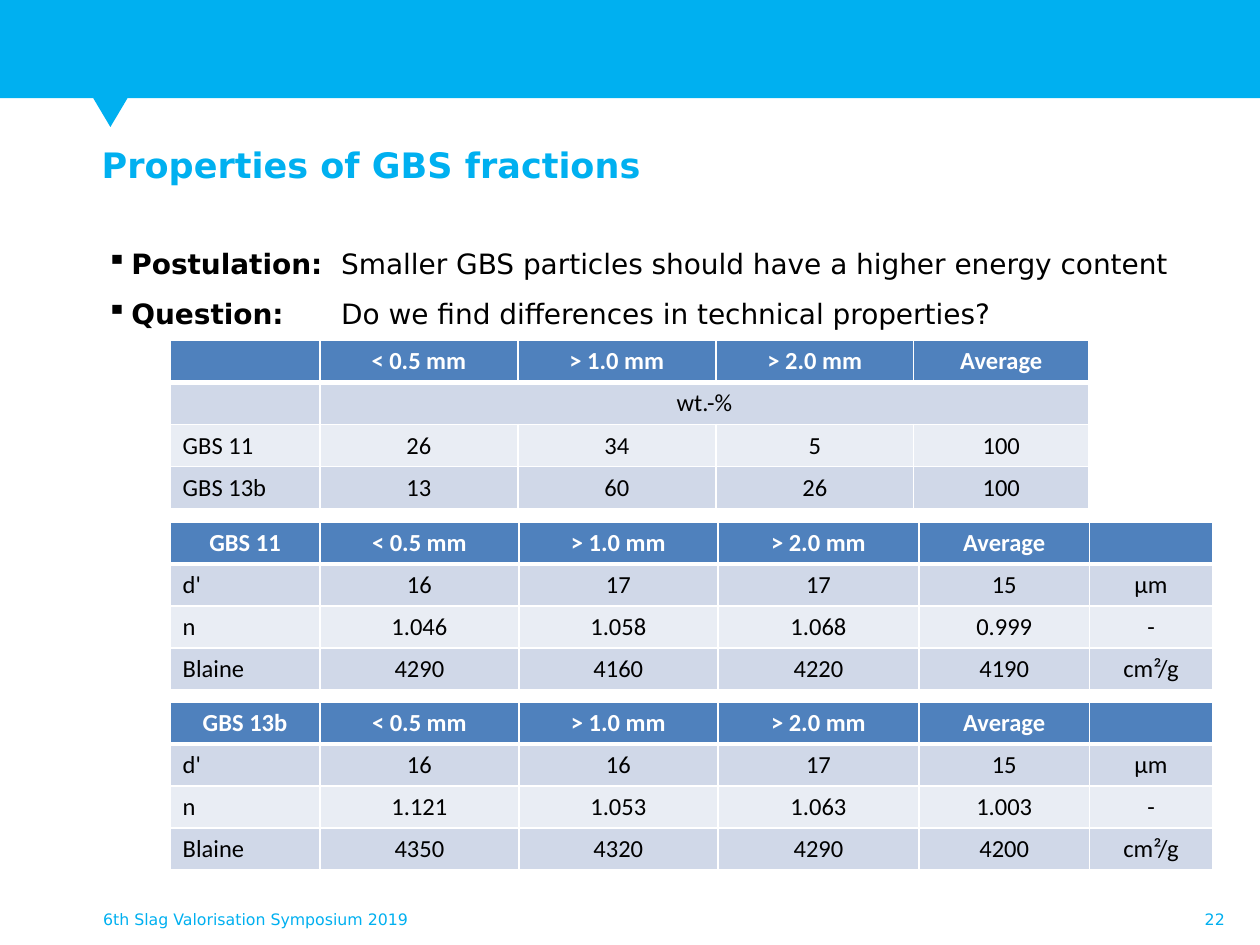
from lxml import etree
from pptx import Presentation
from pptx.dml.color import RGBColor
from pptx.enum.shapes import MSO_SHAPE
from pptx.enum.text import MSO_ANCHOR, PP_ALIGN
from pptx.oxml.ns import qn
from pptx.util import Cm, Pt

RECTANGLE, TRIANGLE = MSO_SHAPE.RECTANGLE, MSO_SHAPE.ISOSCELES_TRIANGLE
TOP, MIDDLE = MSO_ANCHOR.TOP, MSO_ANCHOR.MIDDLE
LEFT, CENTER, RIGHT = PP_ALIGN.LEFT, PP_ALIGN.CENTER, PP_ALIGN.RIGHT


def color(code):
    return RGBColor.from_string(code)


class SlideWriter:
    """Holds the style and the current slide, and draws each kind of element."""

    ACCENT, BLACK, WHITE = "00B0F0", "000000", "FFFFFF"
    HEADER, BANDS = "4F81BD", ("E9EDF4", "D0D8E8")
    TEXT_FONT, TABLE_FONT, TABLE_SIZE = "DejaVu Sans", "Calibri", 14
    ROW_HEIGHT = 0.845

    def __init__(self, slide):
        self.slide = slide

    def shape(self, kind, left, top, width, height, rotation=0):
        shape = self.slide.shapes.add_shape(kind, Cm(left), Cm(top), Cm(width), Cm(height))
        shape.shadow.inherit = False
        shape.rotation = rotation
        shape.fill.solid()
        shape.fill.fore_color.rgb = color(self.ACCENT)
        shape.line.fill.background()

    def span(self, para, text, size, code, bold=False, font=TEXT_FONT):
        span = para.add_run()
        span.text = text
        span.font.size = Pt(size)
        span.font.name = font
        span.font.bold = bold
        span.font.color.rgb = color(code)

    def frame(self, left, top, width, height, anchor=TOP):
        box = self.slide.shapes.add_textbox(Cm(left), Cm(top), Cm(width), Cm(height))
        box.text_frame.word_wrap = True
        box.text_frame.vertical_anchor = anchor
        return box.text_frame

    def label(self, text, left, top, width, height, size, bold=False, align=LEFT, anchor=TOP):
        para = self.frame(left, top, width, height, anchor).paragraphs[0]
        para.alignment = align
        self.span(para, text, size, self.ACCENT, bold)

    def bullets(self, items, left, top, width, height, size, indent, tab):
        frame = self.frame(left, top, width, height)
        for index, (term, statement) in enumerate(items):
            para = frame.add_paragraph() if index else frame.paragraphs[0]
            para.line_spacing = 1.5
            props = para._p.get_or_add_pPr()
            props.set("marL", str(Cm(indent)))
            props.set("indent", str(-Cm(indent)))
            etree.SubElement(props, qn("a:buChar"), char="▪")
            tabs = etree.SubElement(props, qn("a:tabLst"))
            etree.SubElement(tabs, qn("a:tab"), pos=str(Cm(tab)), algn="l")
            self.span(para, term + "\t", size, self.BLACK, bold=True)
            self.span(para, statement, size, self.BLACK)

    def borders(self, cell, top, bottom):
        props = cell._tc.get_or_add_tcPr()
        for side, width in (("L", 1), ("R", 1), ("T", top), ("B", bottom)):
            line = etree.SubElement(props, qn(f"a:ln{side}"), w=str(Pt(width)))
            fill = etree.SubElement(line, qn("a:solidFill"))
            etree.SubElement(fill, qn("a:srgbClr"), val=self.WHITE)

    def cell(self, cell, text, row, column):
        header = row == 0
        self.borders(cell, top=3 if row == 1 else 1, bottom=3 if header else 1)
        cell.fill.solid()
        cell.fill.fore_color.rgb = color(self.HEADER if header else self.BANDS[row % 2])
        cell.vertical_anchor = MIDDLE if header else TOP
        para = cell.text_frame.paragraphs[0]
        para.alignment = CENTER if header or column else LEFT
        if text:
            code = self.WHITE if header else self.BLACK
            self.span(para, text, self.TABLE_SIZE, code, header, self.TABLE_FONT)
        else:
            etree.SubElement(para._p, qn("a:endParaRPr"), sz=str(self.TABLE_SIZE * 100))

    def table(self, rows, left, top, widths):
        frame = self.slide.shapes.add_table(
            len(rows), len(widths), Cm(left), Cm(top),
            Cm(sum(widths)), Cm(self.ROW_HEIGHT * len(rows)))
        table = frame.table
        table.horz_banding = False
        for column, width in zip(table.columns, widths):
            column.width = Cm(width)
        for r, texts in enumerate(rows):
            table.rows[r].height = Cm(self.ROW_HEIGHT)
            for c, text in enumerate(texts):
                self.cell(table.cell(r, c), text, r, c)
        return table


def main():
    deck = Presentation()
    deck.slide_width, deck.slide_height = Cm(25.4), Cm(19.05)
    page = SlideWriter(deck.slides.add_slide(deck.slide_layouts[6]))

    page.shape(RECTANGLE, 0, 0, 25.4, 1.98)
    page.shape(TRIANGLE, 1.88, 1.98, 0.69, 0.58, rotation=180)
    page.label("22", 19.02, 18.03, 5.92, 1.02, 9, align=RIGHT, anchor=MIDDLE)
    page.label("Properties of GBS fractions", 1.8, 2.77, 23.6, 2.39, 20, bold=True)
    page.label("6th Slag Valorisation Symposium 2019", 1.83, 18.03, 8.59, 1.02, 9, anchor=MIDDLE)
    page.bullets(
        [("Postulation:", "Smaller GBS particles should have a higher energy content"),
         ("Question: ", "Do we find differences in technical properties?")],
        1.9, 4.5, 22.89, 2.31, size=16, indent=0.5, tab=4.73)

    fractions = ["< 0.5 mm", "> 1.0 mm", "> 2.0 mm", "Average"]
    shares = page.table(
        [["", *fractions],
         ["", "wt.-%", "", "", ""],
         ["GBS 11", "26", "34", "5", "100"],
         ["GBS 13b", "13", "60", "26", "100"]],
        3.43, 6.86, [3.02, 3.99, 3.99, 3.99, 3.53])
    shares.cell(1, 1).merge(shares.cell(1, 4))

    properties = [("d'", "µm"), ("n", "-"), ("Blaine", "cm²/g")]
    samples = [
        ("GBS 11", 10.52, [["16", "17", "17", "15"],
                           ["1.046", "1.058", "1.068", "0.999"],
                           ["4290", "4160", "4220", "4190"]]),
        ("GBS 13b", 14.15, [["16", "16", "17", "15"],
                            ["1.121", "1.053", "1.063", "1.003"],
                            ["4350", "4320", "4290", "4200"]]),
    ]
    for name, top, results in samples:
        rows = [[name, *fractions, ""]]
        rows += [[term, *values, unit] for (term, unit), values in zip(properties, results)]
        page.table(rows, 3.43, top, [3.02, 4.01, 4.01, 4.06, 3.43, 2.49])

    deck.save("out.pptx")


if __name__ == "__main__":
    main()
